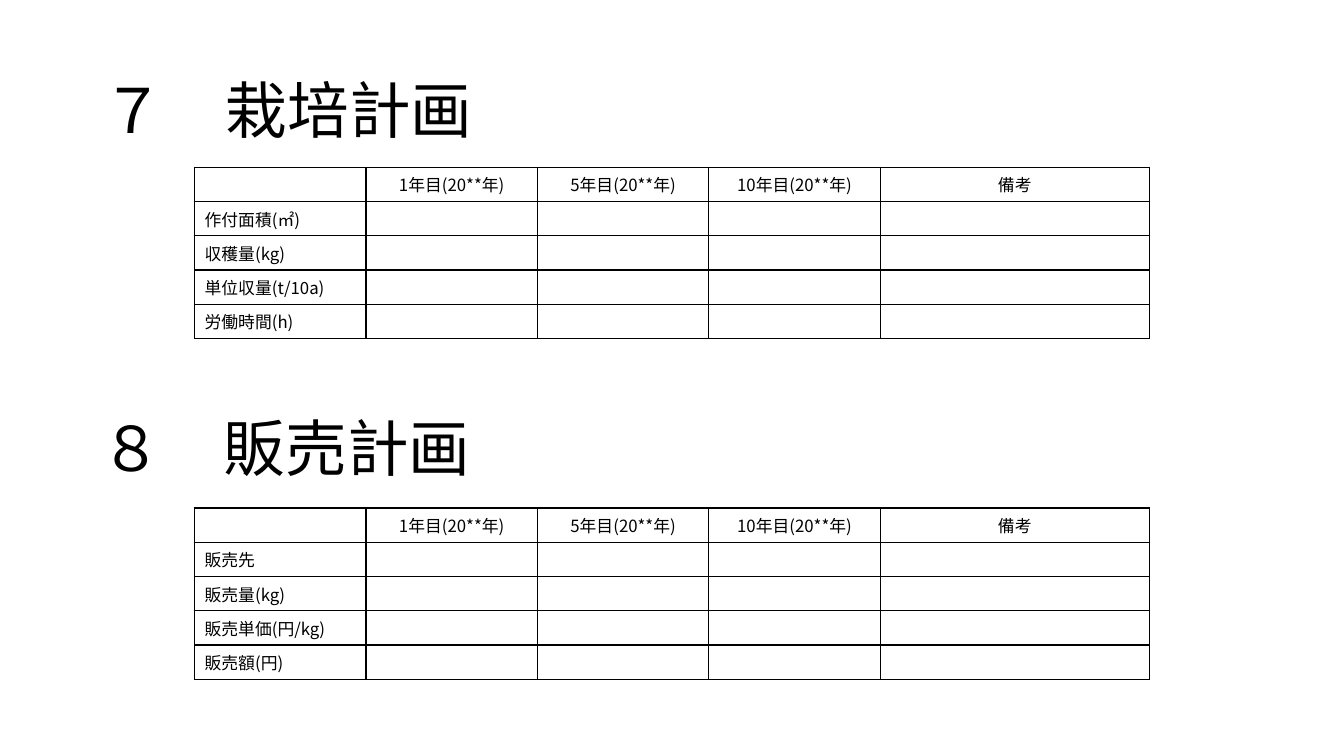
import pptx
import pptx.util
import pptx.dml.color
import pptx.enum.text
import pptx.oxml
import pptx.oxml.ns
import lxml.etree

Inches = pptx.util.Inches
Pt = pptx.util.Pt
ALIGN = pptx.enum.text.PP_ALIGN
MIDDLE = pptx.enum.text.MSO_ANCHOR.MIDDLE
qn = pptx.oxml.ns.qn

BLACK = pptx.dml.color.RGBColor(0x00, 0x00, 0x00)
FONT = "Noto Sans CJK JP"
HEADS = ["", "1年目(20**年)", "5年目(20**年)", "10年目(20**年)", "備考"]
WIDTHS = [1.7, 1.7, 1.7, 1.7, 2.67]
ROW = 0.34
CROP = ["作付面積(㎡)", "収穫量(kg)", "単位収量(t/10a)", "労働時間(h)"]
SALES = ["販売先", "販売量(kg)", "販売単価(円/kg)", "販売額(円)"]


def style(para, size):
    """Set font, size and colour, for East Asian text too."""
    for run in para.runs:
        run.font.name = FONT
        run.font.size = Pt(size)
        run.font.color.rgb = BLACK
        latin = run.font._element.find(qn("a:latin"))
        east = latin.makeelement(qn("a:ea"), {"typeface": FONT})
        latin.addnext(east)
    if not para.runs:
        # An empty cell keeps the text size, so its row does not grow
        end = lxml.etree.SubElement(para._p, qn("a:endParaRPr"))
        end.set("sz", str(size * 100))


def border(cell):
    """Draw a 1 pt line on all four sides."""
    props = cell._tc.get_or_add_tcPr()
    for index, side in enumerate(["lnL", "lnR", "lnT", "lnB"]):
        line = pptx.oxml.parse_xml(
            f'<a:{side} {pptx.oxml.ns.nsdecls("a")} w="12700"><a:solidFill>'
            f'<a:srgbClr val="{BLACK}"/></a:solidFill></a:{side}>')
        props.insert(index, line)


def add_title(slide, text, left, top):
    box = slide.shapes.add_textbox(
        Inches(left), Inches(top), Inches(11.5), Inches(1.45))
    frame = box.text_frame
    frame.word_wrap = True
    frame.vertical_anchor = MIDDLE
    frame.text = text
    para = frame.paragraphs[0]
    para.line_spacing = 0.9
    style(para, 44)


def add_plan(slide, top, labels):
    rows = [HEADS] + [[label] + [""] * 4 for label in labels]
    table = slide.shapes.add_table(
        len(rows), len(HEADS), Inches(1.93), Inches(top),
        Inches(sum(WIDTHS)), Inches(ROW * len(rows))).table
    table.first_row = False
    table.horz_banding = False
    for column, width in zip(table.columns, WIDTHS):
        column.width = Inches(width)
    for r, texts in enumerate(rows):
        table.rows[r].height = Inches(ROW)
        for c, text in enumerate(texts):
            cell = table.cell(r, c)
            cell.fill.background()
            cell.vertical_anchor = MIDDLE
            border(cell)
            para = cell.text_frame.paragraphs[0]
            para.text = text
            para.alignment = ALIGN.LEFT if c == 0 else ALIGN.CENTER
            style(para, 12)


def main():
    deck = pptx.Presentation()
    deck.slide_width = Inches(13.33)
    deck.slide_height = Inches(7.5)
    slide = deck.slides.add_slide(deck.slide_layouts[6])

    # Growing plan
    add_title(slide, "７　栽培計画", 0.92, 0.4)
    add_plan(slide, 1.66, CROP)

    # Sales plan
    add_title(slide, "８　販売計画", 0.9, 3.75)
    add_plan(slide, 5.04, SALES)

    deck.save("out.pptx")


if __name__ == "__main__":
    main()
